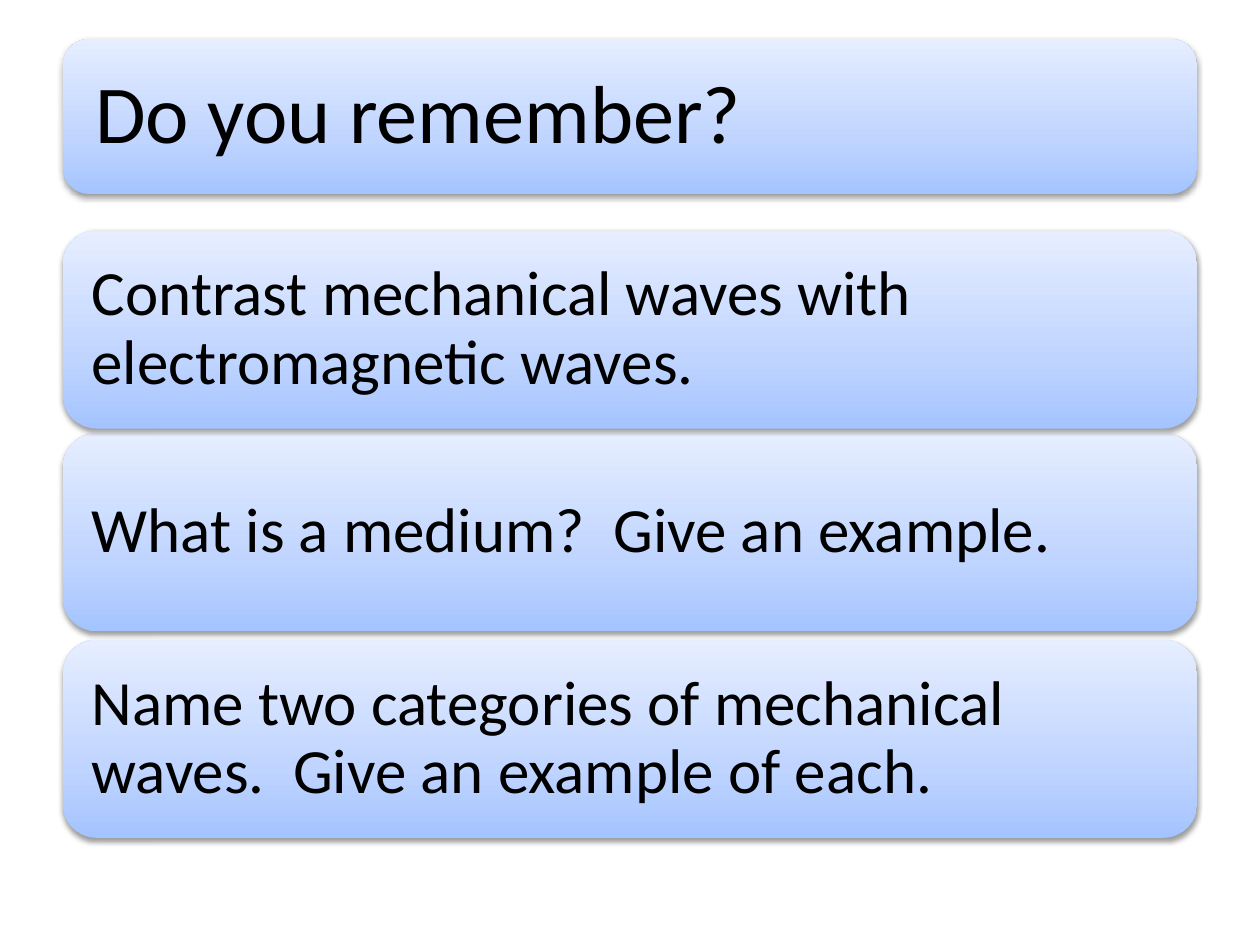
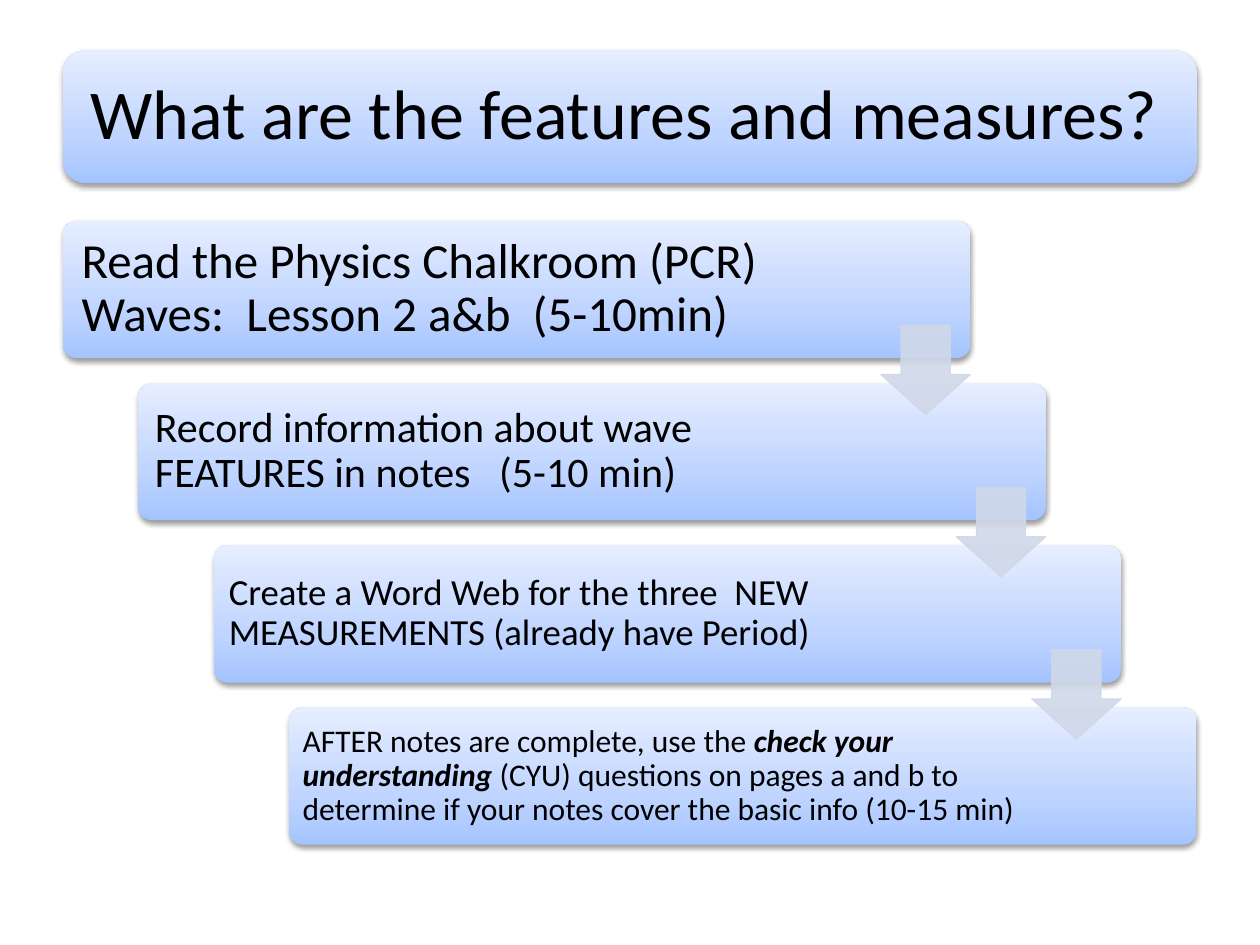
import dataclasses

import pptx
import pptx.dml.color
import pptx.enum.shapes
import pptx.enum.text
import pptx.oxml
import pptx.oxml.ns
import pptx.util
from pptx.util import Cm, Pt


@dataclasses.dataclass(frozen=True)
class Theme:
    font: str = "Calibri"
    text: str = "000000"
    arrow: str = "D0D8E8"
    arrow_opacity: int = 90
    gradient: tuple = ((0, "A4C4FF"), (35, "BFD4FF"), (100, "E6EEFF"))
    question_size: int = 36
    step_sizes: tuple = (28, 24, 21, 18)
    margin_per_point: float = 0.3
    line_spacing: float = 0.9


theme = Theme()
namespace = pptx.oxml.ns.nsdecls("a")
stops = "".join(
    f'<a:gs pos="{position * 1000}"><a:srgbClr val="{color}"/></a:gs>'
    for position, color in theme.gradient
)
gradient_xml = (
    f'<a:gradFill {namespace} rotWithShape="1"><a:gsLst>{stops}</a:gsLst>'
    '<a:lin ang="16200000" scaled="0"/></a:gradFill>'
)
shadow_xml = (
    f'<a:outerShdw {namespace} blurRad="40000" dist="20000" dir="5400000" '
    'rotWithShape="0"><a:srgbClr val="000000"><a:alpha val="38000"/>'
    "</a:srgbClr></a:outerShdw>"
)


def add_panel(slide, left, top, width, height, rounding):
    """Add a rounded panel with the shared gradient and soft shadow (cm)."""
    panel = slide.shapes.add_shape(
        pptx.enum.shapes.MSO_SHAPE.ROUNDED_RECTANGLE,
        Cm(left), Cm(top), Cm(width), Cm(height),
    )
    panel.adjustments[0] = rounding
    panel.line.fill.background()
    panel.shadow.inherit = False
    properties = panel.element.spPr
    outline = properties.find(pptx.oxml.ns.qn("a:ln"))
    outline.addprevious(pptx.oxml.parse_xml(gradient_xml))
    effects = properties.find(pptx.oxml.ns.qn("a:effectLst"))
    effects.append(pptx.oxml.parse_xml(shadow_xml))
    return panel


def write_text(shape, runs, size, right_reserve=0):
    """Fill a shape with (text, emphasised) runs; margins grow with the size."""
    margin = Pt(size * theme.margin_per_point)
    frame_format = {
        "margin_left": margin,
        "margin_top": margin,
        "margin_bottom": margin,
        "margin_right": margin + Cm(right_reserve),
        "word_wrap": True,
        "auto_size": pptx.enum.text.MSO_AUTO_SIZE.NONE,
        "vertical_anchor": pptx.enum.text.MSO_ANCHOR.MIDDLE,
    }
    for name, value in frame_format.items():
        setattr(shape.text_frame, name, value)
    paragraph = shape.text_frame.paragraphs[0]
    paragraph.alignment = pptx.enum.text.PP_ALIGN.LEFT
    paragraph.line_spacing = theme.line_spacing
    for text, emphasised in runs:
        run = paragraph.add_run()
        run.text = text
        font_format = {
            "name": theme.font,
            "size": Pt(size),
            "bold": emphasised,
            "italic": emphasised,
        }
        for name, value in font_format.items():
            setattr(run.font, name, value)
        run.font.color.rgb = pptx.dml.color.RGBColor.from_string(theme.text)


presentation = pptx.Presentation()
presentation.slide_width = Cm(25.4)
presentation.slide_height = Cm(19.05)
title_only = presentation.slide_layouts[5]

page_left, page_width = 1.27, 22.86
wide_rounding = 0.17

# Title bands: text, top, height, type size
title_bands = [
    ("Do you remember?", 0.79, 3.12, 47),
    ("What are the features and measures?", 1.02, 2.67, 40),
]
slides = []
for text, top, height, size in title_bands:
    slide = presentation.slides.add_slide(title_only)
    band = add_panel(slide, page_left, top, page_width, height, wide_rounding)
    title = slide.shapes.title
    corner = 0.05 * height
    title.left, title.top = Cm(page_left + corner), Cm(top + corner)
    title.width = Cm(page_width - 2 * corner)
    title.height = Cm(height - 2 * corner)
    write_text(title, [(text, False)], size)
    band.element.addnext(title.element)
    slides.append(slide)
review_slide, steps_slide = slides

# Review questions, lowest first so each shadow falls on the panel below
questions = [
    (12.9, "Name two categories of mechanical waves.  Give an example of each."),
    (8.74, "What is a medium?  Give an example."),
    (4.65, "Contrast mechanical waves with electromagnetic waves."),
]
for top, question in questions:
    panel = add_panel(review_slide, page_left, top, page_width, 3.99, wide_rounding)
    write_text(panel, [(question, False)], theme.question_size)

# Staircase of steps
step_width, step_height = 18.29, 2.77
step_right, step_down = 1.52, 3.27
first_top = 4.45
steps = [
    [("Read the Physics Chalkroom (PCR) Waves:  Lesson 2 a&b  (5-10min)", False)],
    [("Record information about wave FEATURES in notes   (5-10 min)", False)],
    [("Create a Word Web for the three  NEW MEASUREMENTS (already have Period)", False)],
    [
        ("AFTER notes are complete, use the ", False),
        ("check your understanding ", True),
        ("(CYU) questions on pages a and b to determine if your notes cover "
         "the basic info (10-15 min)", False),
    ],
]
for index, (runs, size) in enumerate(zip(steps, theme.step_sizes)):
    panel = add_panel(
        steps_slide, page_left + index * step_right, first_top + index * step_down,
        step_width, step_height, 0.1,
    )
    write_text(panel, runs, size, right_reserve=3.33 if index else 3.07)

# Arrows hang from the lower right corner of every step but the last
arrow_size = 1.8
for index in range(len(steps) - 1):
    arrow = steps_slide.shapes.add_shape(
        pptx.enum.shapes.MSO_SHAPE.DOWN_ARROW,
        Cm(page_left + index * step_right + step_width - arrow_size),
        Cm(first_top + index * step_down + 2.11),
        Cm(arrow_size), Cm(arrow_size),
    )
    arrow.adjustments[0], arrow.adjustments[1] = 0.55, 0.45
    arrow.shadow.inherit = False
    arrow.line.width = Pt(0.75)
    for fill in (arrow.fill, arrow.line.fill):
        fill.solid()
        fill.fore_color.rgb = pptx.dml.color.RGBColor.from_string(theme.arrow)
    for color in arrow.element.spPr.iter(pptx.oxml.ns.qn("a:srgbClr")):
        color.append(pptx.oxml.parse_xml(
            f'<a:alpha {namespace} val="{theme.arrow_opacity * 1000}"/>'
        ))

presentation.save("out.pptx")
